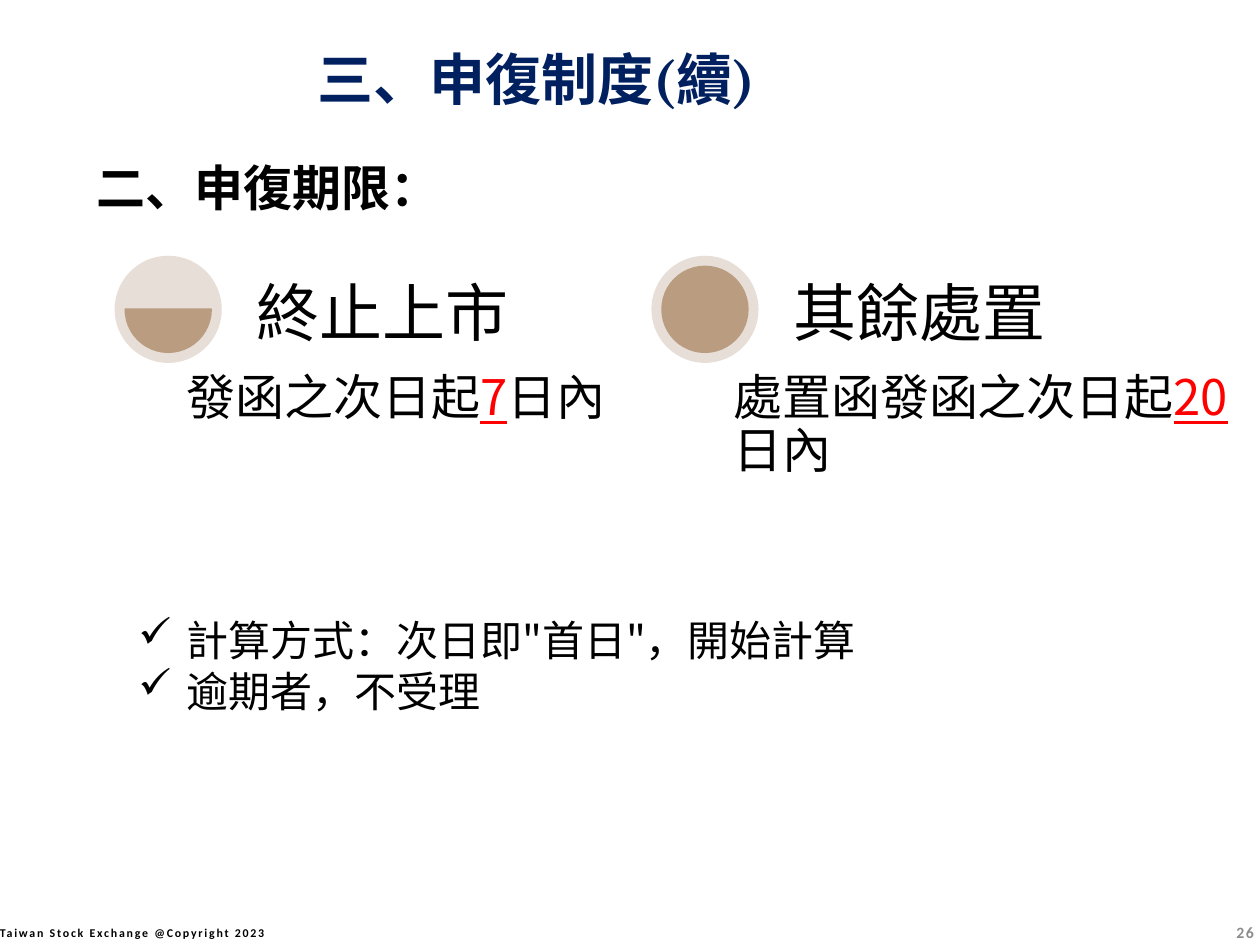
from pptx import Presentation
from pptx.dml.color import RGBColor
from pptx.enum.shapes import MSO_SHAPE as Shape
from pptx.enum.text import MSO_ANCHOR as Anchor, MSO_AUTO_SIZE as AutoSize, PP_ALIGN as Align
from pptx.oxml.ns import qn
from pptx.util import Inches, Pt
from lxml.etree import SubElement

BLACK = RGBColor(0x00, 0x00, 0x00)
NAVY = RGBColor(0x00, 0x20, 0x60)
RED = RGBColor(0xFF, 0x00, 0x00)
GRAY = RGBColor(0x8C, 0x8C, 0x8C)
SAND = RGBColor(0xE7, 0xDE, 0xD8)
TAN = RGBColor(0xBA, 0x9C, 0x80)
CJK = "Noto Sans CJK SC"


def add_run(paragraph, text, size, color=BLACK, name=CJK, spacing=0, **extra):
    """Append a run with Latin and East Asian fonts and letter spacing in points."""
    run = paragraph.add_run()
    run.text = text
    for attribute, value in {"size": Pt(size), "name": name, **extra}.items():
        setattr(run.font, attribute, value)
    run.font.color.rgb = color
    properties = run._r.get_or_add_rPr()
    SubElement(properties, qn("a:ea")).set("typeface", CJK)
    if spacing:
        properties.set("spc", str(round(spacing * 100)))


def set_frame(frame, anchor=Anchor.TOP, inset=(0.1, 0.05)):
    """Apply wrapping, anchor and horizontal and vertical insets to a text frame."""
    across, down = (Inches(length) for length in inset)
    values = {"word_wrap": True, "auto_size": AutoSize.NONE, "vertical_anchor": anchor,
              "margin_left": across, "margin_right": across,
              "margin_top": down, "margin_bottom": down}
    for attribute, value in values.items():
        setattr(frame, attribute, value)


def add_text(slide, box, **frame_format):
    """Add a text box and return its frame."""
    frame = slide.shapes.add_textbox(*map(Inches, box)).text_frame
    set_frame(frame, **frame_format)
    return frame


def place_title(slide, box):
    """Move and format the title placeholder."""
    title = slide.shapes.title
    for side, length in zip(("left", "top", "width", "height"), box):
        setattr(title, side, Inches(length))
    set_frame(title.text_frame)
    heading = title.text_frame.paragraphs[0]
    heading.alignment = Align.LEFT
    add_run(heading, "三、申復制度(續)", 32, NAVY, "Cambria", bold=True)


def add_section_heading(slide, box):
    """Add the heading of the deadline section."""
    heading = add_text(slide, box).paragraphs[0]
    add_run(heading, "二、申復期限：", 28, bold=True)


def add_dial(slide, left, top, chord):
    """Draw a disc with a chord of the given adjustments inside it."""
    disc = slide.shapes.add_shape(Shape.OVAL, *map(Inches, (left, top, 0.85, 0.85)))
    level = slide.shapes.add_shape(
        Shape.CHORD, *map(Inches, (left + 0.085, top + 0.085, 0.68, 0.68)))
    for part, color in ((disc, SAND), (level, TAN)):
        part.shadow.inherit = False
        part.fill.solid()
        part.fill.fore_color.rgb = color
    disc.line.fill.background()
    level.line.color.rgb = TAN
    level.line.width = Pt(1)
    for index, angle in enumerate(chord):
        level.adjustments[index] = angle


def add_deadline(slide, box, chord, name, indent, start, days):
    """Add one kind of sanction with its dial, name and deadline."""
    left, top, width, height = box
    add_dial(slide, left, top, chord)
    label = add_text(slide, (left + 1.03, top, 2.52, 0.85),
                     anchor=Anchor.BOTTOM, inset=(0.1, 0.1)).paragraphs[0]
    add_run(label, name, 36)
    deadline = add_text(slide, (left + indent, top + 0.85, width - indent, height - 0.85),
                        inset=(0.08, 0.08)).paragraphs[0]
    add_run(deadline, start, 28)
    add_run(deadline, days, 28, RED, underline=True)
    add_run(deadline, "日內", 28)
    label.line_spacing = deadline.line_spacing = 0.9


def add_rules(slide, box, rules):
    """Add the check-marked counting rules."""
    frame = add_text(slide, box)
    for index, rule in enumerate(rules):
        paragraph = frame.add_paragraph() if index else frame.paragraphs[0]
        properties = paragraph._p.get_or_add_pPr()
        properties.set("marL", str(Inches(0.38)))
        properties.set("indent", str(-Inches(0.38)))
        SubElement(properties, qn("a:buChar")).set("char", "✓")
        add_run(paragraph, rule, 24)


def add_footer(slide, top):
    """Add the copyright line and the page number."""
    notice = add_text(slide, (-0.11, top, 2.32, 0.4),
                      anchor=Anchor.MIDDLE, inset=(0.07, 0.04)).paragraphs[0]
    notice.alignment = Align.CENTER
    add_run(notice, "Taiwan Stock Exchange @Copyright 2023", 6.8,
            name="Calibri", spacing=1, bold=True)
    page = add_text(slide, (9.61, top, 0.44, 0.4), anchor=Anchor.MIDDLE).paragraphs[0]
    page.alignment = Align.RIGHT
    add_run(page, "26", 9, GRAY, "Calibri", 0.8, bold=True)


def main():
    """Build and save the slide."""
    deck = Presentation()
    deck.slide_width, deck.slide_height = Inches(10), Inches(7.5)
    slide = deck.slides.add_slide(deck.slide_layouts[5])
    place_title(slide, (2.42, 0.3, 7.97, 0.64))
    add_section_heading(slide, (0.67, 1.2, 8.54, 0.57))
    add_deadline(slide, (0.91, 2.03, 4.08, 4.43), (0, 108),
                 "終止上市", 0.49, "發函之次日起", "7")
    add_deadline(slide, (5.17, 2.03, 4.82, 4.43), (162, 162),
                 "其餘處置", 0.57, "處置函發函之次日起", "20")
    add_rules(slide, (1, 4.83, 5.97, 0.91),
              ("計算方式：次日即\"首日\"，開始計算", "逾期者，不受理"))
    add_footer(slide, 7.2)
    deck.save("out.pptx")


if __name__ == "__main__":
    main()
